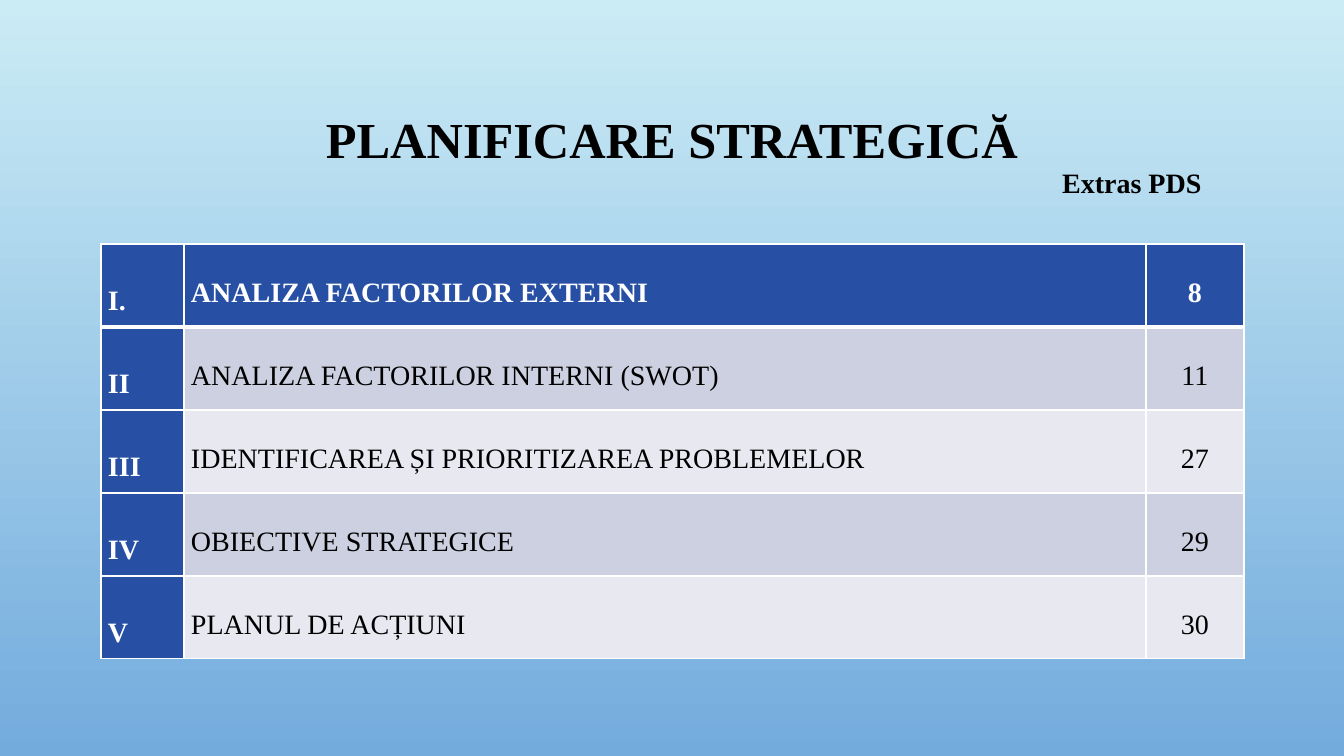
"""Builds the strategic planning contents slide."""
from lxml import etree
from pptx import Presentation, util as u
from pptx.dml.color import RGBColor
from pptx.enum import text
from pptx.oxml.ns import qn

SKY = RGBColor(0xCB, 0xEC, 0xF5)
DUSK = RGBColor(0x73, 0xAB, 0xDD)
BLUE = RGBColor(0x27, 0x4F, 0xA4)
LILAC = RGBColor(0xCD, 0xD0, 0xE0)
PALE = RGBColor(0xE8, 0xE9, 0xF0)
WHITE = RGBColor(0xFF, 0xFF, 0xFF)
BLACK = RGBColor(0, 0, 0)
LEFT, CENTER = text.PP_ALIGN.LEFT, text.PP_ALIGN.CENTER


def px(n):
    return u.Emu(round(n * 914400 / 100.8))


def add_run(paragraph, words, size, color, bold):
    run = paragraph.add_run()
    run.text = words
    run.font.name = "Times New Roman"
    run.font.size = u.Pt(size)
    run.font.color.rgb = color
    run.font.bold = bold


deck = Presentation()
deck.slide_width, deck.slide_height = px(1344), px(756)
slide = deck.slides.add_slide(deck.slide_layouts[5])

sky = slide.background.fill
sky.gradient()
sky.gradient_angle = 270
for stop, color, position in zip(sky.gradient_stops, (SKY, DUSK), (0, 1)):
    stop.color.rgb = color
    stop.position = position

title = slide.shapes.title
title.left, title.top, title.width, title.height = px(101), px(69), px(1142), px(176)
heading = title.text_frame
heading.word_wrap = True
heading.auto_size = text.MSO_AUTO_SIZE.NONE
heading.vertical_anchor = text.MSO_ANCHOR.MIDDLE
main_line, source_line = heading.paragraphs[0], heading.add_paragraph()
for line, words, size, align in (
    (main_line, "PLANIFICARE STRATEGICĂ", 36, CENTER),
    (source_line, "Extras PDS", 20, LEFT),
):
    line.alignment = align
    line.line_spacing = 0.9
    add_run(line, words, size, BLACK, True)
source_line._p.get_or_add_pPr().set("marL", str(px(951)))

chapters = [
    ("I.", "ANALIZA FACTORILOR EXTERNI", "8"),
    ("II", "ANALIZA FACTORILOR INTERNI (SWOT)", "11"),
    ("III", "IDENTIFICAREA ȘI PRIORITIZAREA PROBLEMELOR", "27"),
    ("IV", "OBIECTIVE STRATEGICE", "29"),
    ("V", "PLANUL DE ACȚIUNI", "30"),
]
contents = slide.shapes.add_table(5, 3, px(101), px(244), px(1143), px(415)).table
for column, width in zip(contents.columns, (83, 962, 98)):
    column.width = px(width)
for row in contents.rows:
    row.height = px(83)

for r, chapter in enumerate(chapters):
    for c, words in enumerate(chapter):
        cell = contents.cell(r, c)
        strong = r == 0 or c == 0
        cell.margin_left = cell.margin_right = px(7)
        cell.margin_top = cell.margin_bottom = 0
        cell.vertical_anchor = text.MSO_ANCHOR.MIDDLE
        for side in "LRTB":
            thick = (r, side) in ((0, "B"), (1, "T"))
            border = etree.SubElement(cell._tc.get_or_add_tcPr(), qn(f"a:ln{side}"))
            border.set("w", str(u.Pt(3 if thick else 1)))
            paint = etree.SubElement(border, qn("a:solidFill"))
            etree.SubElement(paint, qn("a:srgbClr")).set("val", str(WHITE))
        cell.fill.solid()
        cell.fill.fore_color.rgb = BLUE if strong else LILAC if r % 2 else PALE
        entry = cell.text_frame.paragraphs[0]
        entry.alignment = CENTER if c == 2 else LEFT
        entry.line_spacing = 2.0 if c == 0 else 1.5
        add_run(entry, words, 20, WHITE if strong else BLACK, strong)

deck.save("out.pptx")
